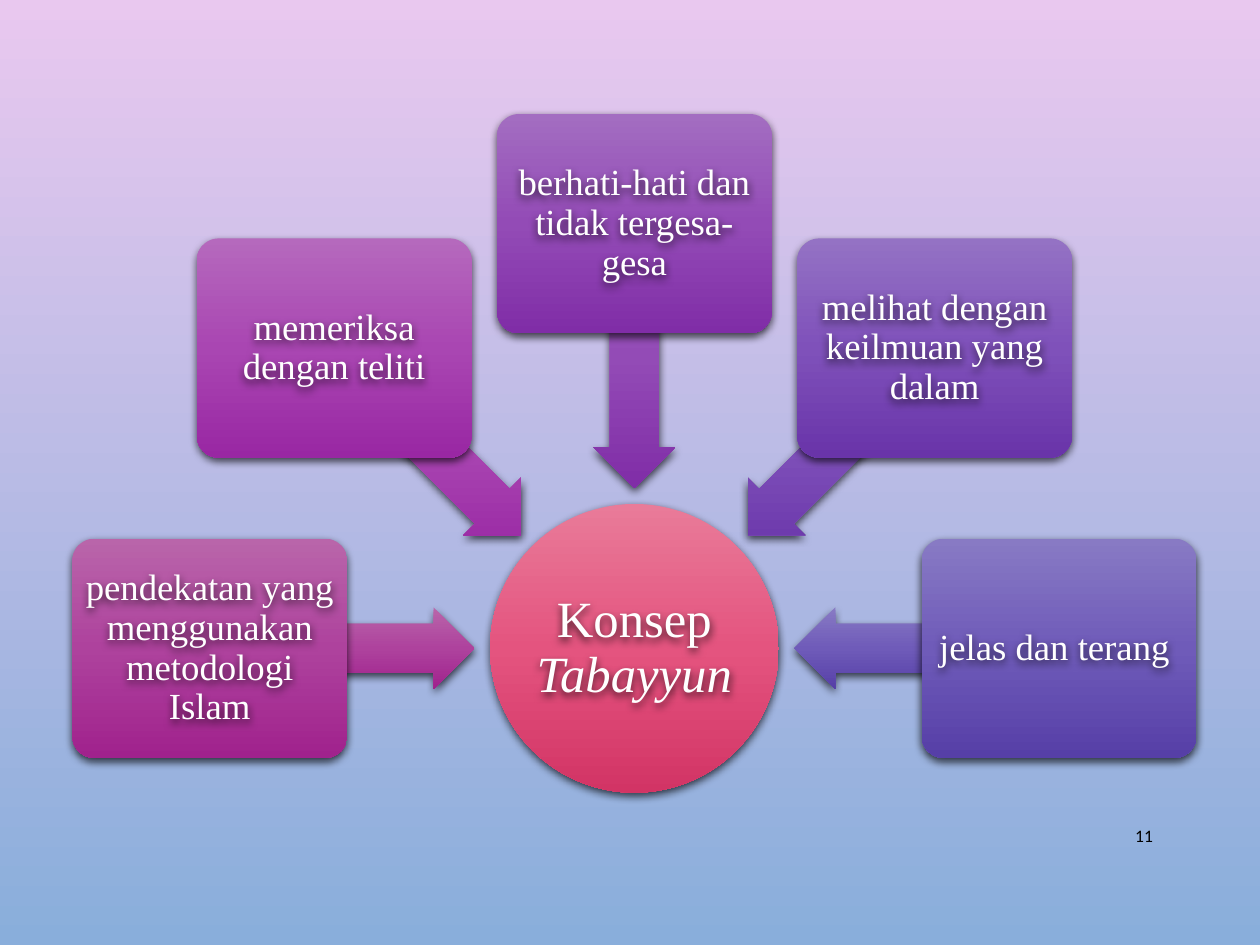
from copy import deepcopy
from dataclasses import dataclass
from math import cos, radians, sin
from typing import Any

from lxml.etree import SubElement
from pptx import Presentation
from pptx.dml.color import RGBColor
from pptx.enum.shapes import MSO_SHAPE as Preset
from pptx.enum.text import MSO_ANCHOR as Anchor, PP_ALIGN as Align
from pptx.oxml.ns import qn
from pptx.util import Cm, Pt

CENTRE = (12.79, 13.07)
NODE_RADIUS, ARROW_RADIUS = 8.56, 5.89
HUB_SIZE, HUB_TEXT_SIZE = (5.82, 5.82), (4.11, 4.11)
NODE_SIZE, NODE_TEXT_SIZE = (5.54, 4.42), (5.28, 4.17)
ARROW_SIZE = (5.33, 1.65)
FIRST_ANGLE, ANGLE_STEP = 180, 45
HUB_COLOURS = ("E97B99", "E4547F", "D23465")
SHADOW = {"blurRad": Pt(5), "dist": Pt(2), "dir": 90 * 60000, "algn": "ctr", "rotWithShape": 0}


@dataclass(frozen=True)
class Node:
    """One aspect of the concept and its gradient from top to bottom."""
    text: str
    colours: tuple[str, ...]


@dataclass(frozen=True)
class Span:
    """A piece of text with its slant."""
    text: str
    italic: bool = False


NODES = [
    Node("pendekatan yang menggunakan metodologi Islam", ("B965AA", "AE429D", "A0228D")),
    Node("memeriksa dengan teliti", ("B569BD", "A946B2", "9927A3")),
    Node("berhati-hati dan tidak tergesa-gesa", ("A36DC1", "934BB6", "802DA7")),
    Node("melihat dengan keilmuan yang dalam", ("9472C4", "7F51BA", "6934A9")),
    Node("jelas dan terang ", ("887AC4", "6F5BB9", "563FA7")),
]


def colour(value: str) -> RGBColor:
    """Turn a hex string into a colour."""
    return RGBColor.from_string(value)


def apply(target: Any, values: dict[str, Any]) -> None:
    """Set each named attribute on the target."""
    for name, value in values.items():
        setattr(target, name, value)


def frame(centre: tuple[float, float], size: tuple[float, float]) -> list[Cm]:
    """Give left, top, width and height around a centre."""
    corner = [middle - length / 2 for middle, length in zip(centre, size)]
    return [Cm(length) for length in (*corner, *size)]


def around(angle: float, radius: float) -> tuple[float, float]:
    """Find the point at an angle and distance from the hub."""
    turn = radians(angle)
    return CENTRE[0] + radius * cos(turn), CENTRE[1] + radius * sin(turn)


def add_gradient(fill: Any, element: Any, colours: tuple[str, ...]) -> None:
    """Fill from top to bottom with evenly spaced colours."""
    fill.gradient()
    fill.gradient_angle = 270
    stop_list = element.find(".//" + qn("a:gsLst"))
    stop_list.getparent().set("rotWithShape", "0")
    for _ in colours[2:]:
        stop_list.append(deepcopy(stop_list[0]))
    for index, (stop, value) in enumerate(zip(fill.gradient_stops, colours)):
        stop.position = index / (len(colours) - 1)
        stop.color.rgb = colour(value)


def add_shadow(shape: Any) -> None:
    """Give a shape a soft shadow falling downwards."""
    shape.shadow.inherit = False
    effects = shape.element.spPr.find(qn("a:effectLst"))
    shadow = SubElement(effects, qn("a:outerShdw"), {name: str(value) for name, value in SHADOW.items()})
    tone = SubElement(shadow, qn("a:srgbClr"), val="000000")
    SubElement(tone, qn("a:alpha"), val="69000")


def add_figure(shapes: Any, preset: Preset, centre: tuple[float, float], size: tuple[float, float],
               colours: tuple[str, ...], adjustments: tuple[float, ...] = (), rotation: float = 0) -> None:
    """Draw a borderless preset shape with gradient and shadow."""
    shape = shapes.add_shape(preset, *frame(centre, size))
    shape.rotation = rotation
    for index, value in enumerate(adjustments):
        shape.adjustments[index] = value
    add_gradient(shape.fill, shape.element.spPr, colours)
    shape.line.fill.background()
    add_shadow(shape)


def add_label(shapes: Any, centre: tuple[float, float], size: tuple[float, float], spans: list[Span],
              points: float, inset: float) -> None:
    """Write centred white text with a shadow."""
    box = shapes.add_textbox(*frame(centre, size))
    sides = ("left", "top", "right", "bottom")
    margins = {f"margin_{side}": Cm(inset) for side in sides}
    apply(box.text_frame, {"word_wrap": True, "vertical_anchor": Anchor.MIDDLE, **margins})
    para = box.text_frame.paragraphs[0]
    apply(para, {"alignment": Align.CENTER, "line_spacing": 0.9, "space_after": Pt(0.35 * points)})
    for span in spans:
        run = para.add_run()
        run.text = span.text
        apply(run.font, {"name": "Times New Roman", "size": Pt(points), "italic": span.italic})
        run.font.color.rgb = colour("FFFFFF")
    add_shadow(box)


def add_page_number(page: Any, text: str) -> None:
    """Write the page number at the lower right."""
    box = page.shapes.add_textbox(Cm(21.89), Cm(16.33), Cm(1.6), Cm(1.02))
    apply(box.text_frame, {"word_wrap": True, "vertical_anchor": Anchor.MIDDLE})
    para = box.text_frame.paragraphs[0]
    para.alignment = Align.RIGHT
    run = para.add_run()
    run.text = text
    apply(run.font, {"name": "Calibri", "size": Pt(10)})
    run.font.color.rgb = colour("000000")


def main() -> None:
    """Build the radial diagram and save the deck."""
    deck = Presentation()
    apply(deck, {"slide_width": Cm(25.4), "slide_height": Cm(19.05)})
    page = deck.slides.add_slide(deck.slide_layouts[6])
    add_gradient(page.background.fill, page.element, ("E9C8EF", "89AEDB"))
    add_page_number(page, "11")
    shapes = page.shapes.add_group_shape().shapes
    add_figure(shapes, Preset.OVAL, CENTRE, HUB_SIZE, HUB_COLOURS)
    add_label(shapes, CENTRE, HUB_TEXT_SIZE, [Span("Konsep "), Span("Tabayyun", True)], 29, 0.05)
    for index, node in enumerate(NODES):
        angle = FIRST_ANGLE + index * ANGLE_STEP
        centre = around(angle, NODE_RADIUS)
        add_figure(shapes, Preset.LEFT_ARROW, around(angle, ARROW_RADIUS), ARROW_SIZE,
                   node.colours, (0.6, 0.5), angle % 360)
        add_figure(shapes, Preset.ROUNDED_RECTANGLE, centre, NODE_SIZE, node.colours, (0.1,))
        add_label(shapes, centre, NODE_TEXT_SIZE, [Span(node.text)], 21, 0.1)
    deck.save("out.pptx")


if __name__ == "__main__":
    main()
